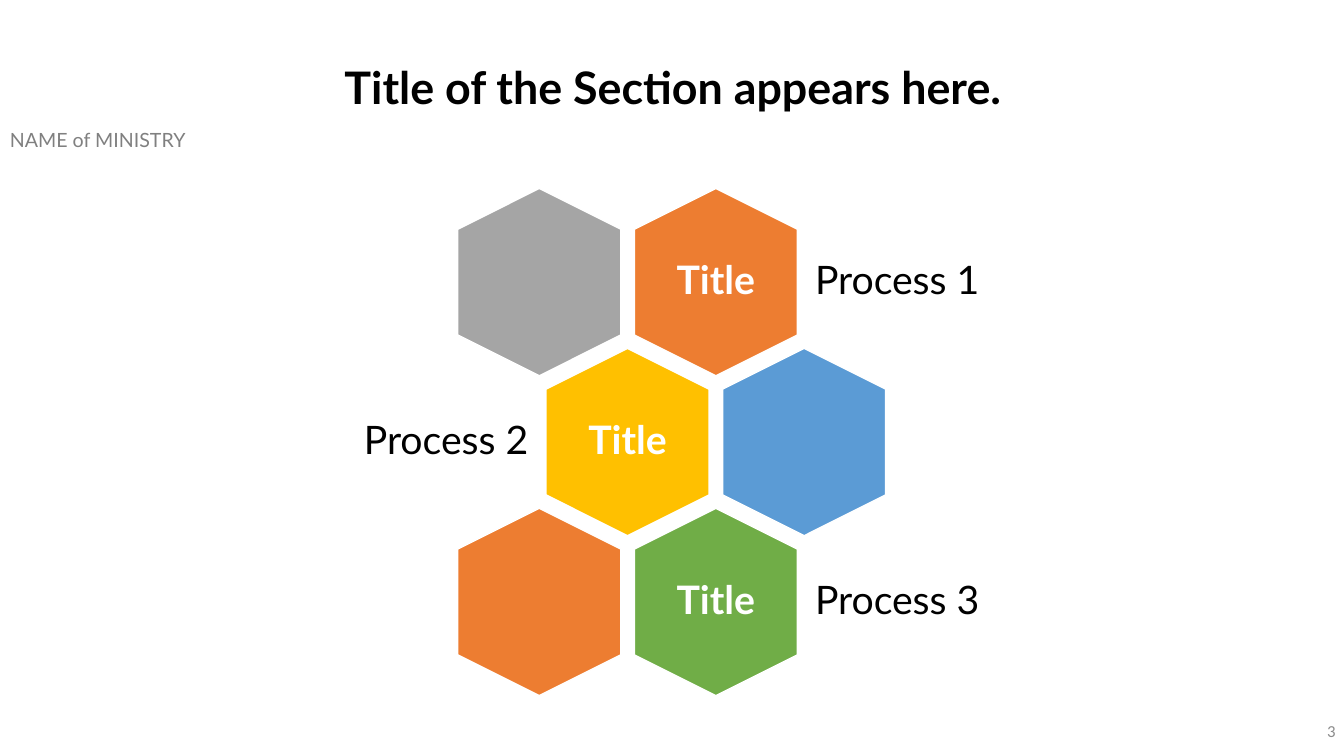
from dataclasses import dataclass

from pptx import Presentation
from pptx.dml.color import RGBColor
from pptx.enum import shapes, text
from pptx.util import Cm, Pt


@dataclass(frozen=True)
class Theme:
    font: str = "Lato"
    number_font: str = "Calibri"
    black: str = "000000"
    white: str = "FFFFFF"
    ministry_grey: str = "808080"
    number_grey: str = "8C8C8C"
    orange: str = "ED7D31"
    grey: str = "A5A5A5"
    gold: str = "FFC000"
    blue: str = "5B9BD5"
    green: str = "70AD47"
    heading_size: int = 32
    process_size: int = 28
    ministry_size: int = 14
    number_size: int = 12


@dataclass(frozen=True)
class Box:
    """Left, top, width and height in centimetres."""
    left: float
    top: float
    width: float
    height: float


@dataclass(frozen=True)
class Style:
    size: int
    color: str
    font: str = "Lato"
    bold: bool = False
    align: text.PP_ALIGN = text.PP_ALIGN.LEFT
    anchor: text.MSO_ANCHOR = text.MSO_ANCHOR.MIDDLE
    spacing: float = 1.0
    inset: float = 0.25


@dataclass(frozen=True)
class Cell:
    """One hexagon; a process cell has a title and a label beside it."""
    row: int
    column: int
    color: str
    process: str = ""


THEME = Theme()
LEFT, CENTER, RIGHT = text.PP_ALIGN.LEFT, text.PP_ALIGN.CENTER, text.PP_ALIGN.RIGHT

# Honeycomb geometry in centimetres
HEX_LENGTH, HEX_WIDTH = 4.72, 4.11
FIRST_X, FIRST_Y = 13.59, 7.11
COLUMN_PITCH, ROW_PITCH = 4.45, 4.03
LABEL_OFFSET, LABEL_WIDTH, LABEL_HEIGHT = 2.2, 5.2, 2.84
TITLE_WIDTH, TITLE_HEIGHT = 2.84, 3.25

CELLS = [
    Cell(0, 1, THEME.orange, "Process 1"),
    Cell(0, 0, THEME.grey),
    Cell(1, 0, THEME.gold, "Process 2"),
    Cell(1, 1, THEME.blue),
    Cell(2, 1, THEME.green, "Process 3"),
    Cell(2, 0, THEME.orange),
]


def write(shape, words: str, style: Style) -> None:
    frame = shape.text_frame
    frame.word_wrap = True
    frame.auto_size = text.MSO_AUTO_SIZE.NONE
    frame.vertical_anchor = style.anchor
    frame.margin_left = frame.margin_right = Cm(style.inset)
    frame.margin_top = frame.margin_bottom = Cm(style.inset / 2)
    paragraph = frame.paragraphs[0]
    paragraph.alignment = style.align
    paragraph.line_spacing = style.spacing
    run = paragraph.add_run()
    run.text = words
    run.font.name = style.font
    run.font.size = Pt(style.size)
    run.font.bold = style.bold
    run.font.color.rgb = RGBColor.from_string(style.color)


def add_text(slide, box: Box, words: str, style: Style) -> None:
    area = slide.shapes.add_textbox(
        Cm(box.left), Cm(box.top), Cm(box.width), Cm(box.height))
    write(area, words, style)


def add_cell(slide, cell: Cell) -> None:
    shifted = cell.row % 2
    x = FIRST_X + (cell.column + shifted / 2) * COLUMN_PITCH
    y = FIRST_Y + cell.row * ROW_PITCH

    hexagon = slide.shapes.add_shape(
        shapes.MSO_SHAPE.HEXAGON, Cm(x - HEX_LENGTH / 2), Cm(y - HEX_WIDTH / 2),
        Cm(HEX_LENGTH), Cm(HEX_WIDTH))
    hexagon.rotation = 90
    hexagon.adjustments[0] = 0.25
    hexagon.shadow.inherit = False
    hexagon.fill.solid()
    hexagon.fill.fore_color.rgb = RGBColor.from_string(cell.color)
    hexagon.line.color.rgb = RGBColor.from_string(THEME.white)
    hexagon.line.width = Pt(1)

    if not cell.process:
        return

    # Upright title, and the process label on the outer side
    add_text(slide, Box(x - TITLE_WIDTH / 2, y - TITLE_HEIGHT / 2,
                        TITLE_WIDTH, TITLE_HEIGHT), "Title",
             Style(THEME.process_size, THEME.white, bold=True, align=CENTER,
                   spacing=0.9, inset=0.3))
    label_left = x - LABEL_OFFSET - LABEL_WIDTH if shifted else x + LABEL_OFFSET
    add_text(slide, Box(label_left, y - LABEL_HEIGHT / 2,
                        LABEL_WIDTH, LABEL_HEIGHT), cell.process,
             Style(THEME.process_size, THEME.black,
                   align=RIGHT if shifted else LEFT, spacing=0.9, inset=0.3))


def main() -> None:
    deck = Presentation()
    deck.slide_width, deck.slide_height = Cm(33.87), Cm(19.05)
    slide = deck.slides.add_slide(deck.slide_layouts[5])

    # Heading
    heading = slide.shapes.title
    heading.left, heading.top = Cm(8.33), Cm(1.52)
    heading.width, heading.height = Cm(17.27), Cm(2.72)
    write(heading, "Title of the Section appears here. ",
          Style(THEME.heading_size, THEME.black, bold=True, align=CENTER,
                anchor=text.MSO_ANCHOR.TOP, spacing=0.9))

    # Ministry name
    add_text(slide, Box(0, 3.1, 7.37, 0.86), "NAME of MINISTRY",
             Style(THEME.ministry_size, THEME.ministry_grey,
                   anchor=text.MSO_ANCHOR.TOP))

    # Honeycomb
    for cell in CELLS:
        add_cell(slide, cell)

    # Slide number
    add_text(slide, Box(26.29, 17.91, 7.62, 1.02), "3",
             Style(THEME.number_size, THEME.number_grey, THEME.number_font,
                   align=RIGHT))

    deck.save("out.pptx")


if __name__ == "__main__":
    main()
